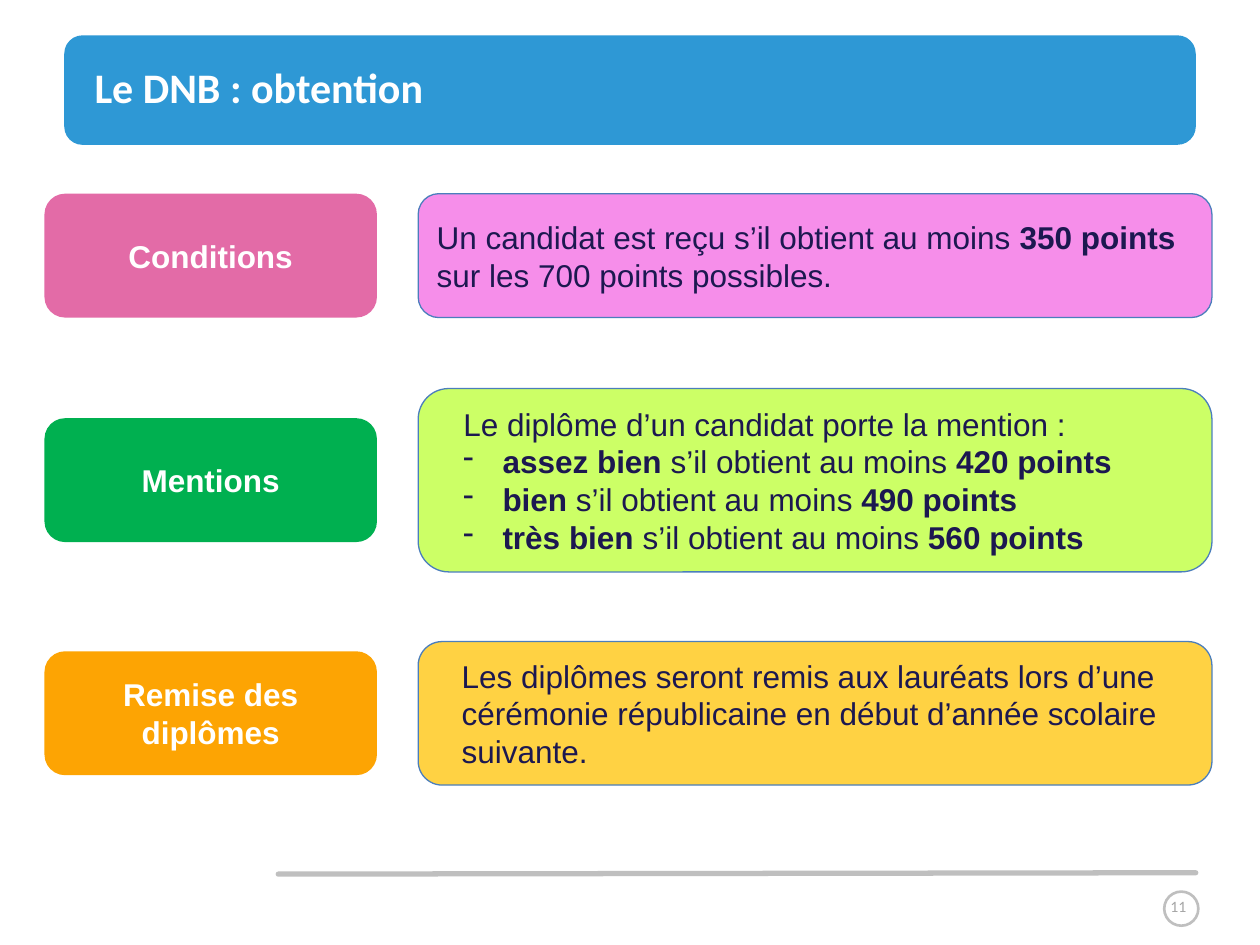
from lxml.etree import SubElement
from pptx import Presentation
from pptx.dml.color import RGBColor
from pptx.enum.shapes import MSO_CONNECTOR as Connector, MSO_SHAPE as Shape
from pptx.enum.text import MSO_ANCHOR as Anchor, PP_ALIGN as Align
from pptx.oxml.ns import qn
from pptx.util import Pt

WHITE = RGBColor(0xFF, 0xFF, 0xFF)
BLUE = RGBColor(0x2E, 0x98, 0xD5)
NAVY = RGBColor(0x1C, 0x18, 0x50)
OUTLINE = RGBColor(0x4B, 0x7E, 0xBC)
RULE_GRAY = RGBColor(0xBF, 0xBF, 0xBF)
NUMBER_GRAY = RGBColor(0xA6, 0xA6, 0xA6)
PINK = RGBColor(0xE3, 0x6B, 0xA7)
LIGHT_PINK = RGBColor(0xF6, 0x8E, 0xEA)
GREEN = RGBColor(0x00, 0xB0, 0x50)
LIGHT_GREEN = RGBColor(0xCC, 0xFF, 0x66)
ORANGE = RGBColor(0xFD, 0xA4, 0x03)
YELLOW = RGBColor(0xFF, 0xD2, 0x43)

LABEL_LEFT, LABEL_WIDTH, LABEL_HEIGHT = 25.4, 190, 70.8
DETAIL_LEFT, DETAIL_WIDTH = 239, 453.6
TEXT_INDENT, BULLET_INDENT, BULLET_HANGING = 13.7, 36, -22.5

# Each row: label, label top, label fill, detail top, detail height, detail fill,
# detail paragraphs as (left indent, bulleted, [(text, bold), ...])
ROWS = [
    ("Conditions", 110.7, PINK, 110.7, 70.8, LIGHT_PINK, [
        (0, False, [("Un candidat est reçu s’il obtient au moins ", False),
                    ("350 points", True),
                    (" sur les 700 points possibles.", False)]),
    ]),
    ("Mentions", 239, GREEN, 222, 104.8, LIGHT_GREEN, [
        (TEXT_INDENT, False, [("Le diplôme d’un candidat porte la mention :", False)]),
        *[(BULLET_INDENT, True, [(mention, True),
                                 (" s’il obtient au moins ", False),
                                 (f"{points} points", True)])
          for mention, points in (("assez bien", 420), ("bien", 490), ("très bien", 560))],
    ]),
    ("Remise des diplômes", 372.2, ORANGE, 366.6, 82, YELLOW, [
        (TEXT_INDENT, False, [("Les diplômes seront remis aux lauréats lors d’une "
                               "cérémonie républicaine en début d’année scolaire "
                               "suivante.", False)]),
    ]),
]


def set_font(font, name, size, color, bold=None):
    font.name, font.size, font.bold = name, Pt(size), bold
    font.color.rgb = color


def add_box(slide, kind, left, top, width, height, fill=None, line=None, line_width=0.75):
    shape = slide.shapes.add_shape(kind, Pt(left), Pt(top), Pt(width), Pt(height))
    shape.shadow.inherit = False
    if fill is None:
        shape.fill.background()
    else:
        shape.fill.solid()
        shape.fill.fore_color.rgb = fill
    if line is None:
        shape.line.fill.background()
    else:
        shape.line.color.rgb = line
        shape.line.width = Pt(line_width)
    shape.text_frame.word_wrap = True
    shape.text_frame.vertical_anchor = Anchor.MIDDLE
    return shape


def add_title(slide, text):
    add_box(slide, Shape.ROUNDED_RECTANGLE, 36.7, 20.2, 646.6, 62.6, BLUE)
    title = slide.shapes.title
    slide.shapes._spTree.append(title._element)  # bring in front of the banner
    title.left, title.top, title.width, title.height = Pt(54), Pt(13), Pt(629), Pt(73.4)
    frame = title.text_frame
    frame.text = text
    frame.vertical_anchor = Anchor.MIDDLE
    frame.margin_left = frame.margin_top = frame.margin_right = frame.margin_bottom = 0
    paragraph = frame.paragraphs[0]
    paragraph.alignment = Align.LEFT
    set_font(paragraph.font, "Calibri", 24, WHITE, True)


def add_label(slide, text, top, fill):
    shape = add_box(slide, Shape.ROUNDED_RECTANGLE, LABEL_LEFT, top,
                    LABEL_WIDTH, LABEL_HEIGHT, fill)
    paragraph = shape.text_frame.paragraphs[0]
    paragraph.text = text
    paragraph.alignment = Align.CENTER
    set_font(paragraph.font, "Arial", 18, WHITE, True)


def add_detail(slide, top, height, fill, paragraphs):
    shape = add_box(slide, Shape.ROUNDED_RECTANGLE, DETAIL_LEFT, top,
                    DETAIL_WIDTH, height, fill, OUTLINE)
    frame = shape.text_frame
    for index, (indent, bulleted, runs) in enumerate(paragraphs):
        paragraph = frame.add_paragraph() if index else frame.paragraphs[0]
        paragraph.alignment = Align.LEFT
        properties = paragraph._p.get_or_add_pPr()
        properties.set("marL", str(Pt(indent)))
        if bulleted:
            properties.set("indent", str(Pt(BULLET_HANGING)))
            SubElement(properties, qn("a:buChar")).set("char", "-")
        set_font(paragraph.font, "Arial", 18, NAVY)
        for text, bold in runs:
            run = paragraph.add_run()
            run.text = text
            run.font.bold = bold


def add_footer(slide, number):
    rule = slide.shapes.add_connector(Connector.STRAIGHT, Pt(159), Pt(499.5), Pt(683.3), Pt(498.7))
    rule.line.color.rgb = RULE_GRAY
    rule.line.width = Pt(3)
    rule.line._get_or_add_ln().set("cap", "rnd")
    SubElement(rule._element.spPr, qn("a:effectLst"))

    add_box(slide, Shape.OVAL, 665.3, 509.5, 19.5, 19.5, line=RULE_GRAY, line_width=1.5)
    box = slide.shapes.add_textbox(Pt(647.5), Pt(508.3), Pt(51.8), Pt(19.4))
    box.text_frame.word_wrap = True
    box.text_frame.vertical_anchor = Anchor.MIDDLE
    paragraph = box.text_frame.paragraphs[0]
    paragraph.text = number
    paragraph.alignment = Align.CENTER
    set_font(paragraph.font, "Calibri", 9, NUMBER_GRAY)


def main():
    presentation = Presentation()
    presentation.slide_width, presentation.slide_height = Pt(720), Pt(540)
    slide = presentation.slides.add_slide(presentation.slide_layouts[5])

    # Banner and footer
    add_title(slide, "Le DNB : obtention")
    add_footer(slide, "11")

    # Label and detail rows
    for label, label_top, label_fill, top, height, fill, paragraphs in ROWS:
        add_label(slide, label, label_top, label_fill)
        add_detail(slide, top, height, fill, paragraphs)

    presentation.save("out.pptx")


if __name__ == "__main__":
    main()
